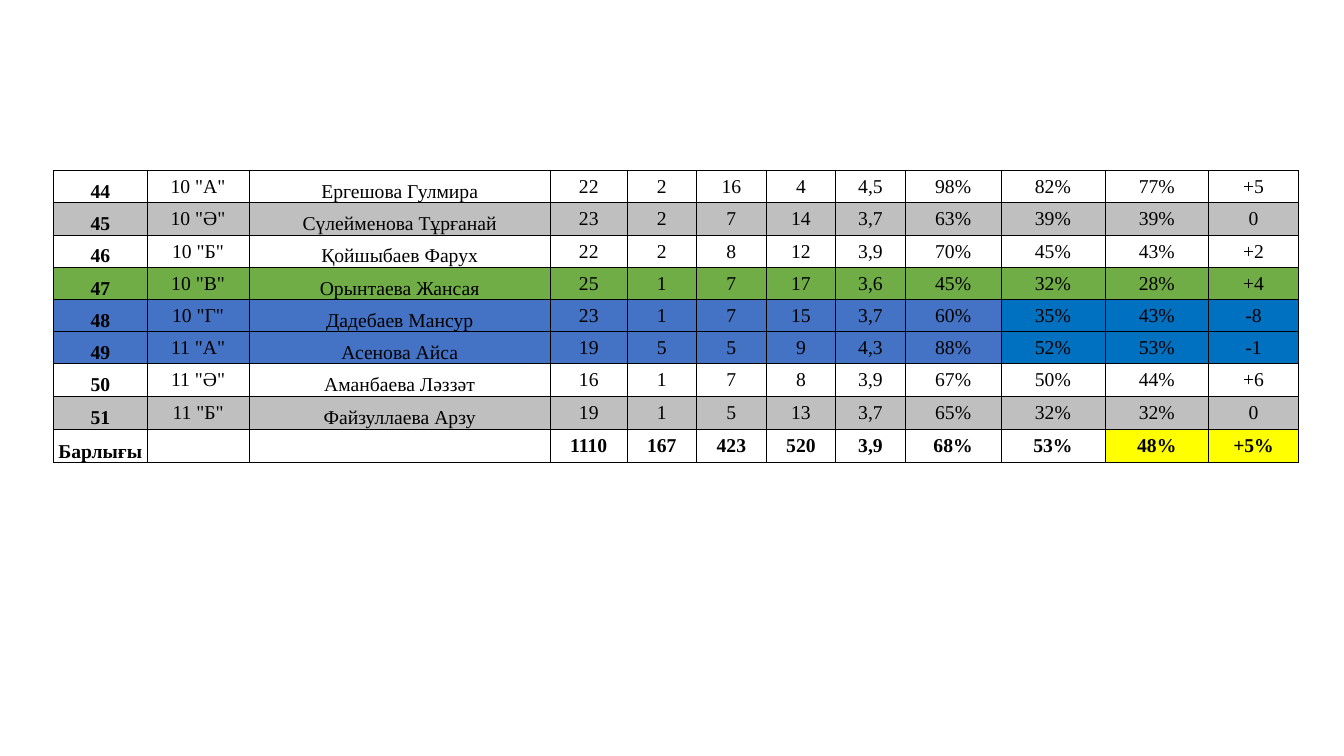
from lxml import etree
from pptx import Presentation
from pptx.dml.color import RGBColor
from pptx.enum.text import MSO_ANCHOR, PP_ALIGN
from pptx.oxml.ns import qn
from pptx.util import Inches, Pt

CENTER = PP_ALIGN.CENTER
MIDDLE = MSO_ANCHOR.MIDDLE
BOTTOM = MSO_ANCHOR.BOTTOM
BLACK, WHITE, GRAY = "000000", "FFFFFF", "BFBFBF"
GREEN, BLUE, AZURE, YELLOW = "70AD47", "4472C4", "0070C0", "FFFF00"

WIDTHS = [0.93, 1.01, 2.99, 0.76, 0.69, 0.69, 0.69, 0.69, 0.95, 1.03, 1.03, 0.89]
HEIGHTS = [0.32] * 7 + [0.33] * 2
ROWS = [
    ["44", '10 "А"', "Ергешова Гулмира", "22", "2", "16", "4", "4,5", "98%", "82%", "77%", "+5"],
    ["45", '10 "Ә"', "Сүлейменова Тұрғанай", "23", "2", "7", "14", "3,7", "63%", "39%", "39%", "0"],
    ["46", '10 "Б"', "Қойшыбаев Фарух", "22", "2", "8", "12", "3,9", "70%", "45%", "43%", "+2"],
    ["47", '10 "В"', "Орынтаева Жансая", "25", "1", "7", "17", "3,6", "45%", "32%", "28%", "+4"],
    ["48", '10 "Г"', "Дадебаев Мансур", "23", "1", "7", "15", "3,7", "60%", "35%", "43%", "-8"],
    ["49", '11 "А"', "Асенова Айса", "19", "5", "5", "9", "4,3", "88%", "52%", "53%", "-1"],
    ["50", '11 "Ә"', "Аманбаева Ләззәт", "16", "1", "7", "8", "3,9", "67%", "50%", "44%", "+6"],
    ["51", '11 "Б"', "Файзуллаева Арзу", "19", "1", "5", "13", "3,7", "65%", "32%", "32%", "0"],
    ["Барлығы", "", "", "1110", "167", "423", "520", "3,9", "68%", "53%", "48%", "+5%"],
]
FILLS = [
    [WHITE] * 12,
    [GRAY] * 12,
    [WHITE] * 12,
    [GREEN] * 12,
    [BLUE] * 9 + [AZURE] * 3,
    [BLUE] * 9 + [AZURE] * 3,
    [WHITE] * 12,
    [GRAY] * 12,
    [WHITE] * 10 + [YELLOW] * 2,
]
LAST_ROW, LAST_COL = len(ROWS) - 1, len(WIDTHS) - 1


def color(code):
    return RGBColor.from_string(code)


def borders(row, col):
    total = row == LAST_ROW
    thick = {
        "a:lnL": total and col == 1,
        "a:lnR": col == LAST_COL or (total and col == 0),
        "a:lnT": total and col > 0,
        "a:lnB": row >= LAST_ROW - 1 and col > 0,
    }
    return {side: 1 if wide else 0.5 for side, wide in thick.items()}


class Page:
    def __init__(self, slide, font="Times New Roman", size=14):
        self.slide, self.font, self.size = slide, font, size

    def edge(self, cell, sides):
        props = cell._tc.get_or_add_tcPr()
        for side, width in sides.items():
            line = etree.SubElement(props, qn(side), w=str(Pt(width)))
            fill = etree.SubElement(line, qn("a:solidFill"))
            etree.SubElement(fill, qn("a:srgbClr"), val=BLACK)

    def cell(self, cell, text, fill, bold, anchor, sides):
        self.edge(cell, sides)
        cell.fill.solid()
        cell.fill.fore_color.rgb = color(fill)
        cell.margin_left = cell.margin_right = cell.margin_top = Inches(0.01)
        cell.margin_bottom = 0
        cell.vertical_anchor = anchor
        cell.text_frame.text = text
        para = cell.text_frame.paragraphs[0]
        para.alignment = CENTER
        for run in para.runs:
            font = run.font
            font.name, font.size, font.bold = self.font, Pt(self.size), bold
            font.color.rgb = color(BLACK)

    def table(self, left, top, widths, heights, rows, fills):
        frame = self.slide.shapes.add_table(
            len(rows), len(widths), Inches(left), Inches(top),
            Inches(sum(widths)), Inches(sum(heights)))
        table = frame.table
        table.first_row = table.horz_banding = False
        for col, width in zip(table.columns, widths):
            col.width = Inches(width)
        for row, height in zip(table.rows, heights):
            row.height = Inches(height)
        for r, row in enumerate(rows):
            for c, text in enumerate(row):
                bold = c == 0 or r == LAST_ROW
                anchor = BOTTOM if c in (0, 2) else MIDDLE
                self.cell(table.cell(r, c), text, fills[r][c], bold, anchor, borders(r, c))


def main():
    deck = Presentation()
    deck.slide_width, deck.slide_height = Inches(13.33), Inches(7.5)
    page = Page(deck.slides.add_slide(deck.slide_layouts[6]))
    page.table(0.53, 1.69, WIDTHS, HEIGHTS, ROWS, FILLS)
    deck.save("out.pptx")


if __name__ == "__main__":
    main()
